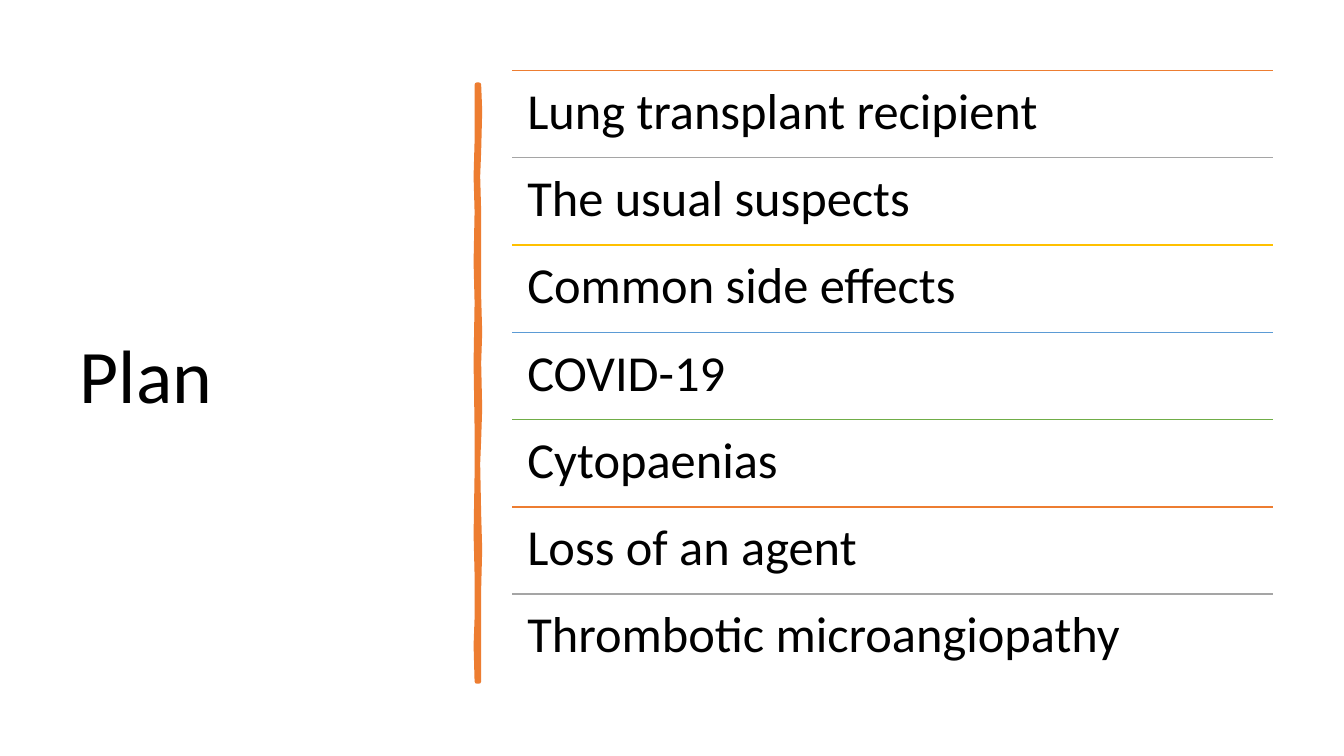
from lxml import etree
from pptx import Presentation
from pptx.dml.color import RGBColor
from pptx.enum.shapes import MSO_CONNECTOR
from pptx.enum.text import MSO_ANCHOR, PP_ALIGN
from pptx.oxml.ns import qn
from pptx.util import Inches, Pt

STRAIGHT = MSO_CONNECTOR.STRAIGHT
MIDDLE, TOP = MSO_ANCHOR.MIDDLE, MSO_ANCHOR.TOP
LEFT = PP_ALIGN.LEFT

BLACK = RGBColor(0x00, 0x00, 0x00)
ORANGE = RGBColor(0xED, 0x7D, 0x31)
GREY = RGBColor(0xA5, 0xA5, 0xA5)
GOLD = RGBColor(0xFF, 0xC0, 0x00)
BLUE = RGBColor(0x5B, 0x9B, 0xD5)
GREEN = RGBColor(0x70, 0xAD, 0x47)
RULE_COLORS = [ORANGE, GREY, GOLD, BLUE, GREEN]

TOPICS = [
    "Lung transplant recipient",
    "The usual suspects",
    "Common side effects",
    "COVID-19",
    "Cytopaenias",
    "Loss of an agent",
    "Thrombotic microangiopathy",
]
AGENDA_LEFT, AGENDA_TOP = 5.08, 0.7
AGENDA_WIDTH, AGENDA_HEIGHT = 7.55, 6.06
ROW_HEIGHT = AGENDA_HEIGHT / len(TOPICS)

BRUSH_RIGHT = [
    (4.75, 0.84), (4.76, 1.1), (4.75, 1.5), (4.74, 1.75), (4.75, 2.1),
    (4.75, 2.94), (4.76, 3.3), (4.75, 3.6), (4.76, 4.05), (4.75, 4.36),
    (4.74, 4.6), (4.75, 5.1), (4.76, 5.45), (4.75, 5.84), (4.75, 6.76),
]
BRUSH_LEFT = [
    (4.73, 6.76), (4.72, 6.4), (4.73, 6.13), (4.73, 5.7), (4.72, 5.3),
    (4.73, 4.7), (4.73, 4.25), (4.72, 3.6), (4.73, 3.0), (4.72, 2.6),
    (4.73, 2.1), (4.72, 1.75), (4.73, 1.4), (4.73, 0.84),
]


def write_text(frame, text, size, anchor, inset=None):
    settings = {"word_wrap": True, "vertical_anchor": anchor}
    if inset is not None:
        for side in ("left", "top", "right", "bottom"):
            settings[f"margin_{side}"] = Inches(inset)
    for name, value in settings.items():
        setattr(frame, name, value)
    frame.text = text
    paragraph = frame.paragraphs[0]
    paragraph.alignment = LEFT
    paragraph.line_spacing = 0.9
    font = paragraph.runs[0].font
    for name, value in {"name": "Calibri", "size": Pt(size)}.items():
        setattr(font, name, value)
    font.color.rgb = BLACK


def add_heading(slide, text):
    heading = slide.shapes.title
    bounds = {"left": 0.69, "top": 0.7, "width": 3.74, "height": 6.11}
    for name, value in bounds.items():
        setattr(heading, name, Inches(value))
    write_text(heading.text_frame, text, 54, MIDDLE)


def add_brush_stroke(slide):
    points = [(Inches(x), Inches(y)) for x, y in BRUSH_RIGHT + BRUSH_LEFT]
    builder = slide.shapes.build_freeform(*points[0])
    builder.add_line_segments(points[1:], close=True)
    stroke = builder.convert_to_shape()
    stroke.shadow.inherit = False
    stroke.fill.solid()
    stroke.fill.fore_color.rgb = ORANGE
    stroke.line.color.rgb = ORANGE
    stroke.line.width = Pt(3.25)


def add_rule(slide, top, color):
    rule = slide.shapes.add_connector(
        STRAIGHT, Inches(AGENDA_LEFT), Inches(top),
        Inches(AGENDA_LEFT + AGENDA_WIDTH), Inches(top))
    rule.line.color.rgb = color
    rule.line.width = Pt(1)
    etree.SubElement(rule._element.spPr, qn("a:effectLst"))


def add_topic(slide, text, top):
    topic = slide.shapes.add_textbox(
        Inches(AGENDA_LEFT), Inches(top),
        Inches(AGENDA_WIDTH), Inches(ROW_HEIGHT))
    write_text(topic.text_frame, text, 36, TOP, 0.15)


def main():
    presentation = Presentation()
    presentation.slide_width = Inches(13.33)
    presentation.slide_height = Inches(7.5)
    slide = presentation.slides.add_slide(presentation.slide_layouts[5])
    add_heading(slide, "Plan")
    add_brush_stroke(slide)
    for index, topic in enumerate(TOPICS):
        top = AGENDA_TOP + index * ROW_HEIGHT
        add_rule(slide, top, RULE_COLORS[index % len(RULE_COLORS)])
        add_topic(slide, topic, top)
    presentation.save("out.pptx")


if __name__ == "__main__":
    main()
